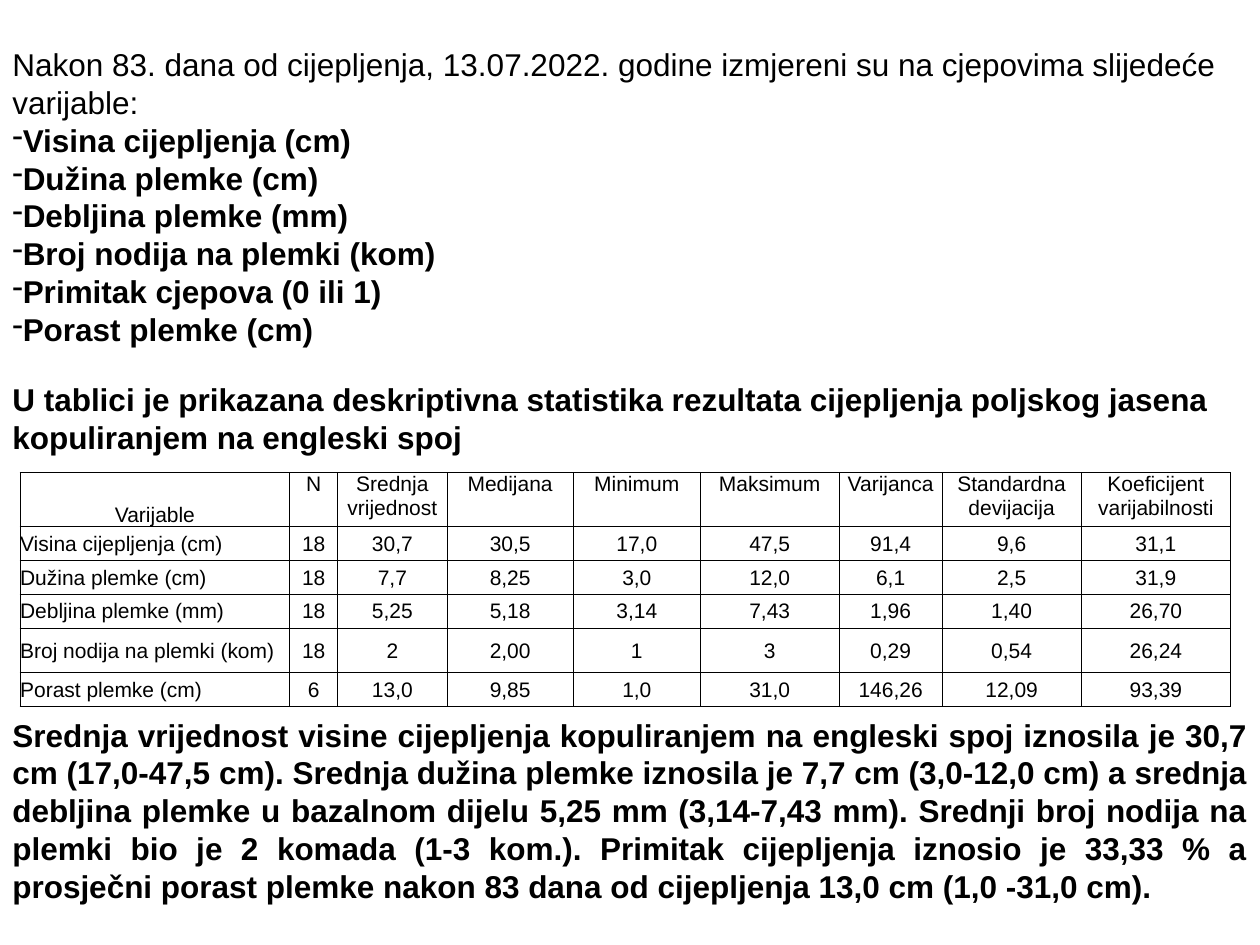
from lxml import etree
from pptx import Presentation, util as u
from pptx.dml.color import RGBColor
from pptx.enum import text
from pptx.oxml import ns

COLORS = {"ink": "000000", "border": "000000"}
FONT = "Arial"


def style(para, size, bold=False, align=text.PP_ALIGN.LEFT):
    para.alignment = align
    for span in para.runs:
        span.font.name = FONT
        span.font.size = u.Pt(size)
        span.font.bold = bold
        span.font.color.rgb = RGBColor.from_string(COLORS["ink"])


def add_text_box(page, top, height, lines):
    box = page.shapes.add_textbox(0, u.Inches(top), u.Inches(10), u.Inches(height))
    frame = box.text_frame
    frame.word_wrap = True
    frame.auto_size = text.MSO_AUTO_SIZE.SHAPE_TO_FIT_TEXT
    frame.text = "\n".join(lines)
    return frame.paragraphs


deck = Presentation()
deck.slide_width, deck.slide_height = u.Inches(10), u.Inches(7.5)
page = deck.slides.add_slide(deck.slide_layouts[6])

# Introduction and list of measured variables
intro, *variables = add_text_box(page, 0.31, 2.52, [
    "Nakon 83. dana od cijepljenja, 13.07.2022. godine izmjereni su na cjepovima slijedeće varijable:",
    "Visina cijepljenja (cm)",
    "Dužina plemke (cm)",
    "Debljina plemke (mm)",
    "Broj nodija na plemki (kom)",
    "Primitak cjepova (0 ili 1)",
    "Porast plemke (cm)",
])
style(intro, 18)
for para in variables:
    properties = para._p.get_or_add_pPr()
    properties.set("marL", "0")
    properties.set("indent", "0")
    etree.SubElement(properties, ns.qn("a:buChar"), char="-")
    style(para, 18, bold=True)

# Statistics table
rows = [
    ["Varijable", "N", "Srednja vrijednost", "Medijana", "Minimum", "Maksimum",
     "Varijanca", "Standardna devijacija", "Koeficijent varijabilnosti"],
    ["Visina cijepljenja (cm)", "18", "30,7", "30,5", "17,0", "47,5", "91,4", "9,6", "31,1"],
    ["Dužina plemke (cm)", "18", "7,7", "8,25", "3,0", "12,0", "6,1", "2,5", "31,9"],
    ["Debljina plemke (mm)", "18", "5,25", "5,18", "3,14", "7,43", "1,96", "1,40", "26,70"],
    ["Broj nodija na plemki (kom)", "18", "2", "2,00", "1", "3", "0,29", "0,54", "26,24"],
    ["Porast plemke (cm)", "6", "13,0", "9,85", "1,0", "31,0", "146,26", "12,09", "93,39"],
]
widths = [2.14, 0.38, 0.87, 1, 1.01, 1.1, 0.82, 1.1, 1.19]
heights = [0.43, 0.27, 0.27, 0.27, 0.35, 0.27]
table = page.shapes.add_table(len(rows), len(widths), u.Inches(0.16), u.Inches(3.75),
                              u.Inches(sum(widths)), u.Inches(sum(heights))).table
table.first_row = table.horz_banding = False
for column, width in zip(table.columns, widths):
    column.width = u.Inches(width)
for row, height in zip(table.rows, heights):
    row.height = u.Inches(height)

for r, values in enumerate(rows):
    for c, value in enumerate(values):
        cell = table.cell(r, c)
        cell.margin_left = cell.margin_right = cell.margin_top = cell.margin_bottom = 0
        if r > 0:
            cell.vertical_anchor = text.MSO_ANCHOR.MIDDLE
        else:
            cell.vertical_anchor = text.MSO_ANCHOR.BOTTOM if c == 0 else text.MSO_ANCHOR.TOP
        cell.text_frame.text = value
        row_label = r > 0 and c == 0
        style(cell.text_frame.paragraphs[0], 12,
              align=text.PP_ALIGN.LEFT if row_label else text.PP_ALIGN.CENTER)
        # Borders go before the fill in the cell properties
        properties = cell._tc.get_or_add_tcPr()
        for side in ("lnL", "lnR", "lnT", "lnB"):
            line = etree.SubElement(properties, ns.qn(f"a:{side}"), w=str(u.Pt(0.5)))
            fill = etree.SubElement(line, ns.qn("a:solidFill"))
            etree.SubElement(fill, ns.qn("a:srgbClr"), val=COLORS["border"])
        cell.fill.background()

# Table caption
caption = add_text_box(page, 2.97, 0.71, [
    "U tablici je prikazana deskriptivna statistika rezultata cijepljenja poljskog jasena "
    "kopuliranjem na engleski spoj",
])[0]
style(caption, 18, bold=True)

# Summary of results
summary = add_text_box(page, 5.63, 1.62, [
    "Srednja vrijednost visine cijepljenja kopuliranjem na engleski spoj iznosila je 30,7 cm "
    "(17,0-47,5 cm). Srednja dužina plemke iznosila je 7,7 cm (3,0-12,0 cm) a srednja debljina "
    "plemke u bazalnom dijelu 5,25 mm (3,14-7,43 mm). Srednji broj nodija na plemki bio je "
    "2 komada (1-3 kom.). Primitak cijepljenja iznosio je 33,33 % a prosječni porast plemke "
    "nakon 83 dana od cijepljenja 13,0 cm (1,0 -31,0 cm).",
])[0]
style(summary, 18, bold=True, align=text.PP_ALIGN.JUSTIFY)

deck.save("out.pptx")
